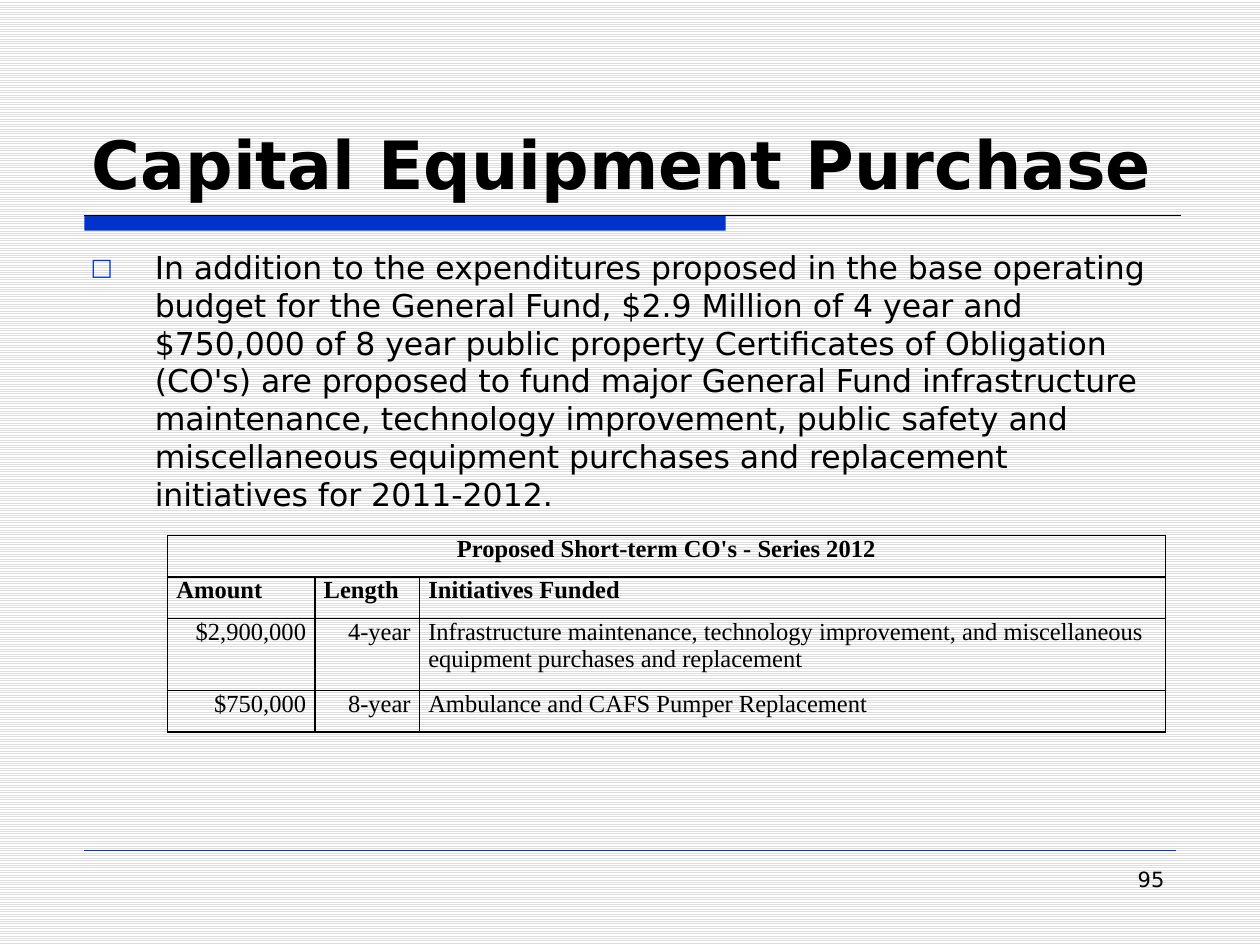
from dataclasses import dataclass

from lxml import etree
from pptx import Presentation
from pptx.dml.color import RGBColor
from pptx.enum import dml, shapes, text
from pptx.oxml import ns
from pptx.util import Inches, Pt


@dataclass(frozen=True)
class Theme:
    black: str = "000000"
    blue: str = "0033CC"
    white: str = "FFFFFF"
    stripe: str = "DDDDDD"
    sans: str = "DejaVu Sans"
    serif: str = "Times New Roman"
    title: float = 38
    body: float = 18
    cell: float = 14
    number: float = 12


theme = Theme()
Align = text.PP_ALIGN


def write(frame, words, size, font=theme.sans, bold=False, align=Align.LEFT):
    frame.word_wrap = True
    paragraph = frame.paragraphs[0]
    paragraph.alignment = align
    run = paragraph.add_run()
    run.text = words
    run.font.size = Pt(size)
    run.font.name = font
    run.font.bold = bold
    run.font.color.rgb = RGBColor.from_string(theme.black)
    return paragraph


def add_rule(left, right, y, color, width):
    """Draw a horizontal line without a shadow."""
    rule = slide.shapes.add_connector(
        shapes.MSO_CONNECTOR.STRAIGHT, Inches(left), Inches(y), Inches(right), Inches(y))
    rule.line.color.rgb = RGBColor.from_string(color)
    rule.line.width = Pt(width)
    etree.SubElement(rule._element.spPr, ns.qn("a:effectLst"))


prs = Presentation()
prs.slide_width, prs.slide_height = Inches(10), Inches(7.5)
slide = prs.slides.add_slide(prs.slide_layouts[6])

# Striped background
backdrop = slide.background.fill
backdrop.patterned()
backdrop.pattern = dml.MSO_PATTERN.LIGHT_HORIZONTAL
backdrop.fore_color.rgb = RGBColor.from_string(theme.stripe)
backdrop.back_color.rgb = RGBColor.from_string(theme.white)

# Title bar and rules
bar = slide.shapes.add_shape(
    shapes.MSO_SHAPE.RECTANGLE, Inches(0.67), Inches(1.71), Inches(5.09), Inches(0.12))
bar.shadow.inherit = False
bar.fill.solid()
bar.fill.fore_color.rgb = RGBColor.from_string(theme.blue)
bar.line.fill.background()
add_rule(0.67, 9.37, 1.71, theme.black, 0.75)
add_rule(0.67, 9.33, 6.75, theme.blue, 0.25)

# Title
title = slide.shapes.add_textbox(Inches(0.63), Inches(0.33), Inches(8.75), Inches(1.33))
title.text_frame.vertical_anchor = text.MSO_ANCHOR.BOTTOM
write(title.text_frame, "Capital Equipment Purchase", theme.title, bold=True)

# Bulleted statement
statement = slide.shapes.add_textbox(Inches(0.62), Inches(1.92), Inches(8.75), Inches(4.67))
bullet_paragraph = write(
    statement.text_frame,
    "In addition to the expenditures proposed in the base operating budget for the "
    "General Fund, $2.9 Million of 4 year and $750,000 of 8 year public property "
    "Certificates of Obligation (CO's) are proposed to fund major General Fund "
    "infrastructure maintenance, technology improvement, public safety and "
    "miscellaneous equipment purchases and replacement initiatives for 2011-2012.",
    theme.body)
bullet_paragraph.space_before = Pt(0.2 * theme.body)
bullet = bullet_paragraph._p.get_or_add_pPr()
bullet.set("marL", str(Inches(0.51)))
bullet.set("indent", str(Inches(-0.51)))
bullet_color = etree.SubElement(bullet, ns.qn("a:buClr"))
etree.SubElement(bullet_color, ns.qn("a:srgbClr"), val=theme.blue)
etree.SubElement(bullet, ns.qn("a:buSzPct"), val="75000")
etree.SubElement(bullet, ns.qn("a:buFont"), typeface=theme.sans)
etree.SubElement(bullet, ns.qn("a:buChar"), char="□")

# Page number
page = slide.shapes.add_textbox(Inches(7.17), Inches(6.83), Inches(2.17), Inches(0.52))
write(page.text_frame, "95", theme.number, align=Align.RIGHT)

# Table of proposed obligations
HEADING = "Proposed Short-term CO's - Series 2012"
ROWS = [
    (HEADING, "", ""),
    ("Amount", "Length", "Initiatives Funded"),
    ("$2,900,000", "4-year", "Infrastructure maintenance, technology improvement, "
     "and miscellaneous equipment purchases and replacement"),
    ("$750,000", "8-year", "Ambulance and CAFS Pumper Replacement"),
]
HEADER_ALIGN = (Align.JUSTIFY, Align.JUSTIFY, Align.LEFT)
DATA_ALIGN = (Align.RIGHT, Align.RIGHT, Align.LEFT)
ALIGNS = [(Align.CENTER,) * 3, HEADER_ALIGN, DATA_ALIGN, DATA_ALIGN]

obligations = slide.shapes.add_table(
    4, 3, Inches(1.33), Inches(4.25), Inches(7.92), Inches(1.56)).table
obligations.first_row = obligations.horz_banding = False
for column, width in zip(obligations.columns, (1.17, 0.83, 5.92)):
    column.width = Inches(width)
for row, height in zip(obligations.rows, (0.33, 0.33, 0.57, 0.33)):
    row.height = Inches(height)
obligations.cell(0, 0).merge(obligations.cell(0, 2))

for r, (words, aligns) in enumerate(zip(ROWS, ALIGNS)):
    for c, (entry, align) in enumerate(zip(words, aligns)):
        cell = obligations.cell(r, c)
        cell.margin_left = cell.margin_right = Inches(0.07)
        cell.margin_top = cell.margin_bottom = 0
        if entry:
            write(cell.text_frame, entry, theme.cell, theme.serif, r < 2, align)
        properties = cell._tc.get_or_add_tcPr()
        for side in ("lnL", "lnR", "lnT", "lnB"):
            border = etree.SubElement(properties, ns.qn(f"a:{side}"), w=str(Pt(1)))
            ink = etree.SubElement(border, ns.qn("a:solidFill"))
            etree.SubElement(ink, ns.qn("a:srgbClr"), val=theme.black)
        cell.fill.background()

prs.save("out.pptx")
